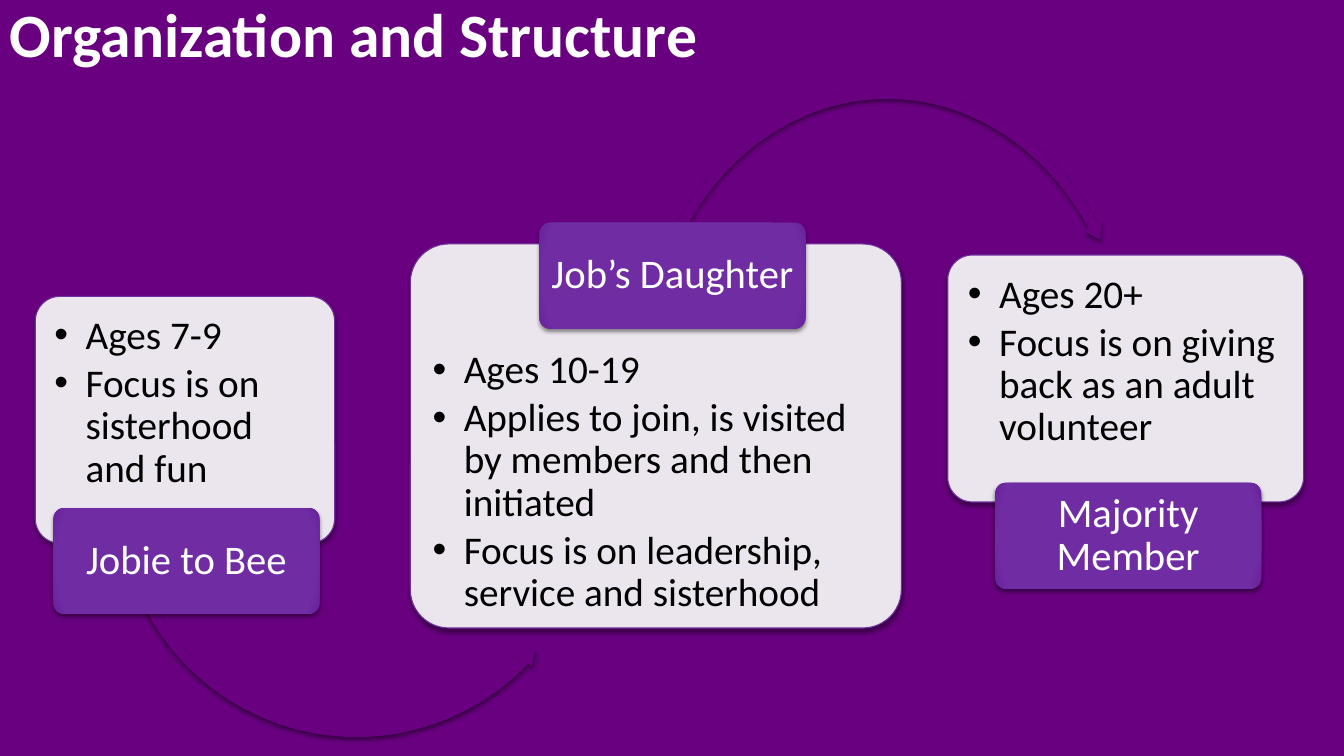
from dataclasses import dataclass

from lxml.etree import SubElement
from pptx import Presentation
from pptx.dml.color import RGBColor
from pptx.enum.shapes import MSO_SHAPE
from pptx.enum.text import MSO_ANCHOR, PP_ALIGN
from pptx.oxml import parse_xml
from pptx.oxml.ns import nsdecls, qn
from pptx.util import Inches, Pt


@dataclass(frozen=True)
class Theme:
    font: str = "Calibri"
    background: str = "68007F"
    accent: str = "7030A0"
    accent_stops: tuple = ((0, "7030A0"), (90, "702DA3"), (100, "67219B"))
    light: str = "FFFFFF"
    dark: str = "000000"
    title_size: int = 44
    label_size: int = 29
    body_size: int = 28
    card_opacity: int = 90
    shadow_opacity: int = 45
    line_spacing: float = 0.9


THEME = Theme()
CORNER = 0.1
LABEL_SIZE = (2.64, 1.05)
LABEL_EDGE = 0.03
ARROW_WIDTH = 0.02
ADJUSTMENT_PER_DEGREE = 0.6

STAGES = [
    {
        "card": (0.35, 2.94, 2.97, 2.45),
        "body": (0.4, 2.99, 2.86, 1.81),
        "points": ["Ages 7-9", "Focus is on sisterhood and fun"],
        "label": "Jobie to Bee",
        "label_at": (0.53, 5.04),
        "arrow": {
            "kind": MSO_SHAPE.LEFT_CIRCULAR_ARROW,
            "box": (1.13, 2.55, 4.81, 4.81),
            "rotation": 10.4,
            "angles": (3.85, 33.36, 150.32),
        },
    },
    {
        "card": (4.07, 2.42, 4.87, 3.81),
        "body": (4.15, 3.33, 4.69, 2.82),
        "points": [
            "Ages 10-19",
            "Applies to join, is visited by members and then initiated",
            "Focus is on leadership, service and sisterhood",
        ],
        "label": "Job’s Daughter",
        "label_at": (5.35, 2.21),
        "arrow": {
            "kind": MSO_SHAPE.CIRCULAR_ARROW,
            "box": (6.29, 0.83, 5.02, 5.79),
            "rotation": 0,
            "angles": (3.68, 323.87, 206.73),
        },
    },
    {
        "card": (9.4, 2.53, 3.53, 2.45),
        "body": (9.46, 2.58, 3.42, 1.81),
        "points": ["Ages 20+", "Focus is on giving back as an adult volunteer"],
        "label": "Majority Member",
        "label_at": (9.87, 4.79),
        "arrow": None,
    },
]


def color(value):
    return RGBColor.from_string(value)


def set_attributes(target, values):
    for name, value in values.items():
        setattr(target, name, value)


def add_panel(slide, kind, box, fill=THEME.background):
    """Add a solid preset shape with neither outline nor shadow."""
    shape = slide.shapes.add_shape(kind, *map(Inches, box))
    shape.shadow.inherit = False
    shape.fill.solid()
    shape.fill.fore_color.rgb = color(fill)
    shape.line.fill.background()
    return shape


def cast_shadow(shape):
    effects = shape._element.spPr.find(qn("a:effectLst"))
    effects.append(parse_xml(
        f'<a:outerShdw {nsdecls("a")} blurRad="{Pt(3)}" dist="{Pt(2)}" '
        f'dir="5400000" rotWithShape="0"><a:srgbClr val="{THEME.dark}">'
        f'<a:alpha val="{THEME.shadow_opacity * 1000}"/></a:srgbClr></a:outerShdw>'))


def write_text(shape, lines, size, text_color, frame_format, paragraph_format,
               bold=False, bulleted=False):
    frame = shape.text_frame
    frame.word_wrap = True
    set_attributes(frame, frame_format)
    for index, line in enumerate(lines):
        paragraph = frame.add_paragraph() if index else frame.paragraphs[0]
        set_attributes(paragraph, {"line_spacing": THEME.line_spacing, **paragraph_format})
        if bulleted:
            add_bullet(paragraph)
        run = paragraph.add_run()
        run.text = line
        set_attributes(run.font, {"name": THEME.font, "size": Pt(size), "bold": bold})
        run.font.color.rgb = color(text_color)


def add_bullet(paragraph):
    properties = paragraph._p.get_or_add_pPr()
    indent = Inches(0.31)
    properties.set("marL", str(indent))
    properties.set("indent", str(-indent))
    SubElement(properties, qn("a:buFont")).set("typeface", "Arial")
    SubElement(properties, qn("a:buChar")).set("char", "•")


def margins(horizontal, vertical):
    return {
        "margin_left": Inches(horizontal), "margin_right": Inches(horizontal),
        "margin_top": Inches(vertical), "margin_bottom": Inches(vertical),
    }


def add_title(slide, text, width):
    title = add_panel(slide, MSO_SHAPE.RECTANGLE, (0, 0, width, 0.75))
    write_text(title, [text], THEME.title_size, THEME.light,
               {"vertical_anchor": MSO_ANCHOR.MIDDLE},
               {"alignment": PP_ALIGN.LEFT}, bold=True)


def add_card(slide, box, body, points):
    card = add_panel(slide, MSO_SHAPE.ROUNDED_RECTANGLE, box, THEME.light)
    card.adjustments[0] = CORNER
    card.line.color.rgb = color(THEME.accent)
    card.line.width = Pt(0.79)
    fill_color = card._element.spPr.find(qn("a:solidFill"))[0]
    SubElement(fill_color, qn("a:alpha")).set("val", str(THEME.card_opacity * 1000))
    cast_shadow(card)
    text_box = slide.shapes.add_textbox(*map(Inches, body))
    write_text(text_box, points, THEME.body_size, THEME.dark, margins(0.14, 0.14),
               {"space_after": Pt(4)}, bulleted=True)


def add_arrow(slide, kind, box, rotation, angles):
    """Add a curved arrow; angles are head sweep, end and start in degrees."""
    arrow = add_panel(slide, kind, box)
    arrow.rotation = rotation
    turns = [angle * ADJUSTMENT_PER_DEGREE for angle in angles]
    for index, value in enumerate([ARROW_WIDTH, *turns, ARROW_WIDTH]):
        arrow.adjustments[index] = value
    cast_shadow(arrow)


def add_label(slide, left, top, text):
    width, height = LABEL_SIZE
    label = add_panel(slide, MSO_SHAPE.ROUNDED_RECTANGLE, (left, top, width, height))
    label.adjustments[0] = CORNER
    stops = "".join(f'<a:gs pos="{position * 1000}"><a:srgbClr val="{value}"/></a:gs>'
                    for position, value in THEME.accent_stops)
    properties = label._element.spPr
    properties.replace(properties.find(qn("a:solidFill")), parse_xml(
        f'<a:gradFill {nsdecls("a")} rotWithShape="1"><a:gsLst>{stops}</a:gsLst>'
        '<a:path path="circle"><a:fillToRect l="100000" t="100000" r="100000" b="100000"/>'
        '</a:path></a:gradFill>'))
    cast_shadow(label)
    text_box = slide.shapes.add_textbox(
        Inches(left + LABEL_EDGE), Inches(top + LABEL_EDGE),
        Inches(width - 2 * LABEL_EDGE), Inches(height - 2 * LABEL_EDGE))
    write_text(text_box, [text], THEME.label_size, THEME.light,
               {"vertical_anchor": MSO_ANCHOR.MIDDLE, **margins(0.06, 0.04)},
               {"alignment": PP_ALIGN.CENTER})


def main():
    presentation = Presentation()
    presentation.slide_width, presentation.slide_height = Inches(13.33), Inches(7.5)
    slide = presentation.slides.add_slide(presentation.slide_layouts[6])
    slide.background.fill.solid()
    slide.background.fill.fore_color.rgb = color(THEME.background)
    add_title(slide, "Organization and Structure", 13.33)
    for stage in STAGES:
        add_card(slide, stage["card"], stage["body"], stage["points"])
        if stage["arrow"]:
            add_arrow(slide, **stage["arrow"])
        add_label(slide, *stage["label_at"], stage["label"])
    presentation.save("out.pptx")


if __name__ == "__main__":
    main()
